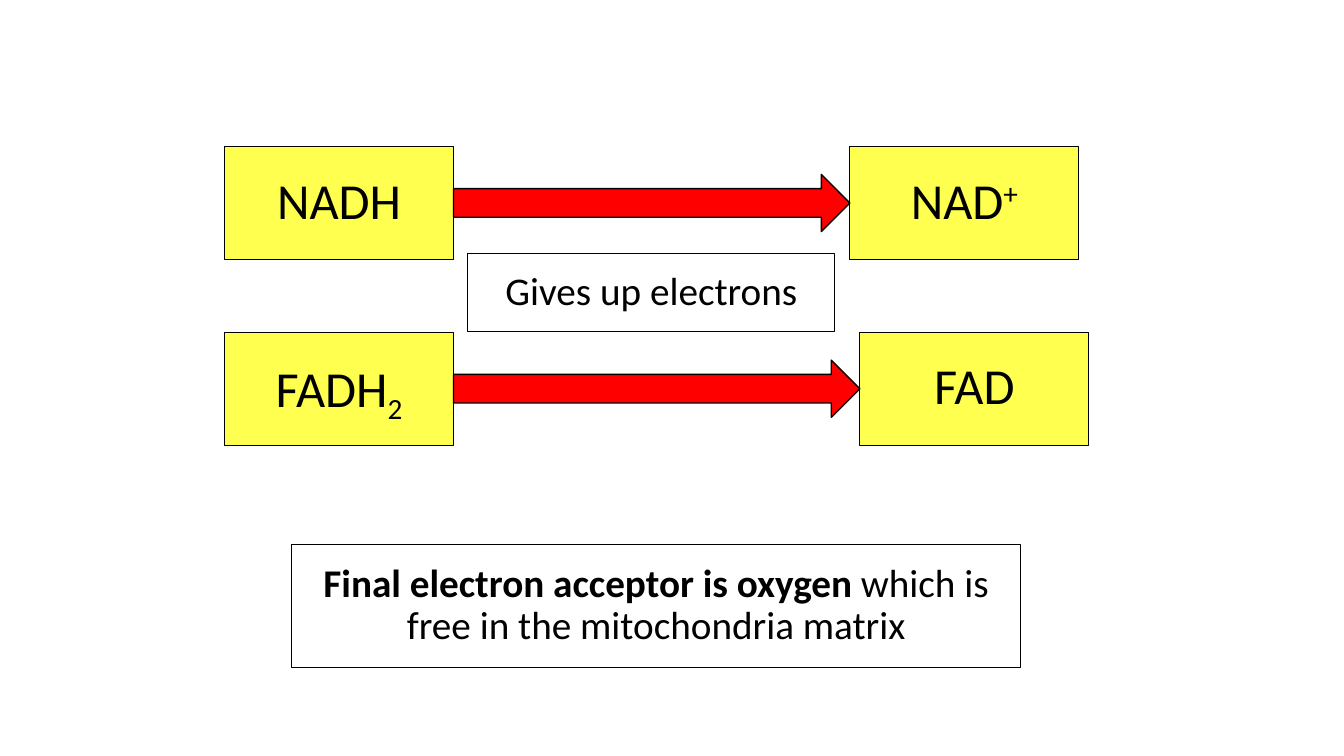
from lxml import etree
from pptx import Presentation
from pptx import util as u
from pptx.dml.color import RGBColor
from pptx.enum import shapes, text
from pptx.oxml.ns import qn

COLOURS = {"ink": "000000", "molecule": "FFFF00", "arrow": "FF0000", "note": "FFFFFF"}


def colour(name):
    return RGBColor.from_string(COLOURS[name])


def write(para, words, size=28, bold=False, baseline=0):
    """Add a span; baseline is the percentage raised (or lowered if negative)."""
    span = para.add_run()
    span.text = words
    span.font.name = "Calibri"
    span.font.size = u.Pt(size)
    span.font.bold = bold
    span.font.color.rgb = colour("ink")
    if baseline:
        span.font._element.set("baseline", str(baseline * 1000))


class SlideBuilder:
    def __init__(self, page):
        self.page = page

    def shape(self, kind, left, top, width, height, fill, line_width):
        item = self.page.shapes.add_shape(
            kind, u.Cm(left), u.Cm(top), u.Cm(width), u.Cm(height))
        item.shadow.inherit = False
        item.fill.solid()
        item.fill.fore_color.rgb = colour(fill)
        item.line.color.rgb = colour("ink")
        item.line.width = u.Pt(line_width)
        return item

    def box(self, left, top, width, height, fill, spans, size=28):
        """Add a translucent box; spans are (words, format) pairs."""
        box = self.shape(shapes.MSO_SHAPE.RECTANGLE, left, top, width, height, fill, 0.75)
        tint = box.fill._xPr.find(".//" + qn("a:srgbClr"))
        etree.SubElement(tint, qn("a:alpha")).set("val", "69000")
        frame = box.text_frame
        frame.word_wrap = True
        frame.vertical_anchor = text.MSO_ANCHOR.MIDDLE
        para = frame.paragraphs[0]
        para.alignment = text.PP_ALIGN.CENTER
        para.line_spacing = 0.9
        for words, style in spans:
            write(para, words, size=size, **style)

    def molecule(self, left, top, spans):
        self.box(left, top, MOLECULE_WIDTH, MOLECULE_HEIGHT, "molecule", spans, size=36)

    def arrow(self, left, top, width):
        self.shape(shapes.MSO_SHAPE.RIGHT_ARROW, left, top, width, ARROW_HEIGHT, "arrow", 1)


MOLECULE_WIDTH, MOLECULE_HEIGHT, ARROW_HEIGHT = 5.77, 2.85, 1.44
CARRIER_LEFT = 5.66
REACTIONS = [
    (3.69, [("NADH", {})], 21.42, [("NAD", {}), ("+", {"baseline": 30})]),
    (8.37, [("FADH", {}), ("2", {"baseline": -25})], 21.67, [("FAD", {})]),
]


def main():
    deck = Presentation()
    deck.slide_width, deck.slide_height = u.Cm(33.87), u.Cm(19.05)
    builder = SlideBuilder(deck.slides.add_slide(deck.slide_layouts[6]))

    arrow_left = CARRIER_LEFT + MOLECULE_WIDTH
    for top, carrier, product_left, product in REACTIONS:
        builder.molecule(CARRIER_LEFT, top, carrier)
        builder.molecule(product_left, top, product)
        arrow_top = top + (MOLECULE_HEIGHT - ARROW_HEIGHT) / 2
        builder.arrow(arrow_left, arrow_top, product_left - arrow_left)

    builder.box(11.79, 6.38, 9.25, 1.98, "note", [("Gives up electrons", {})])
    builder.box(7.34, 13.72, 18.39, 3.1, "note", [
        ("Final electron acceptor is oxygen ", {"bold": True}),
        ("which is free in the mitochondria matrix", {}),
    ])
    deck.save("out.pptx")


if __name__ == "__main__":
    main()
